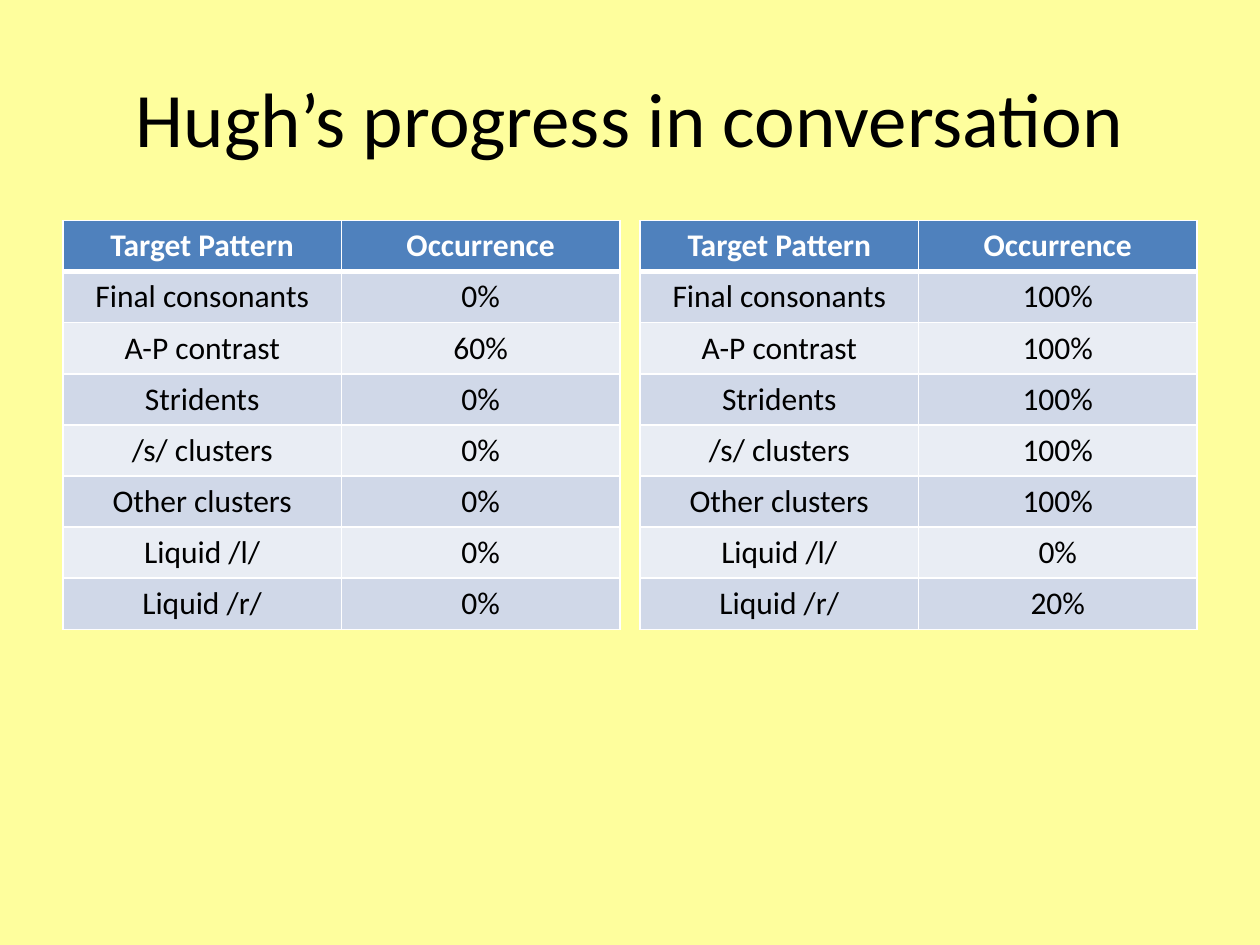
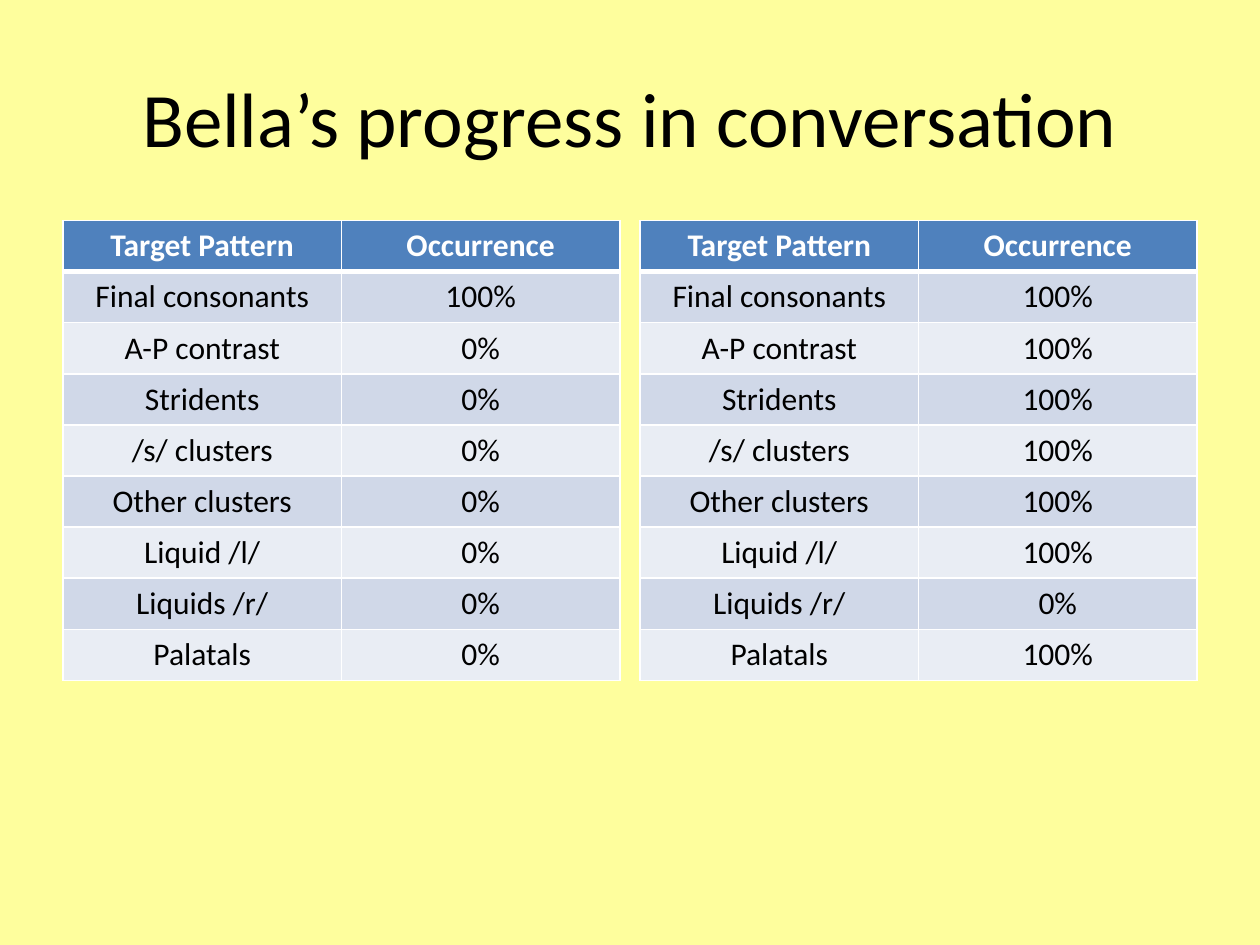
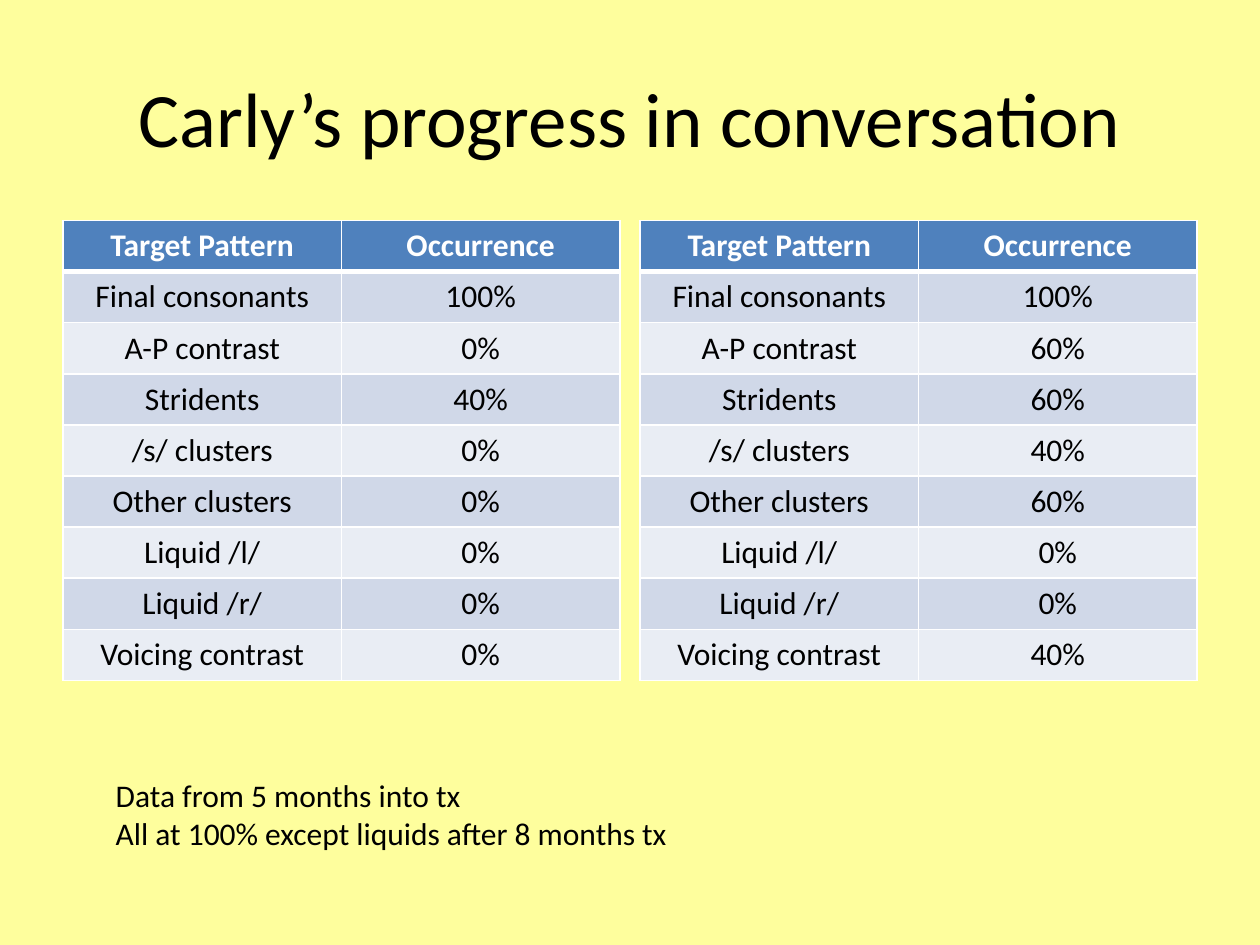
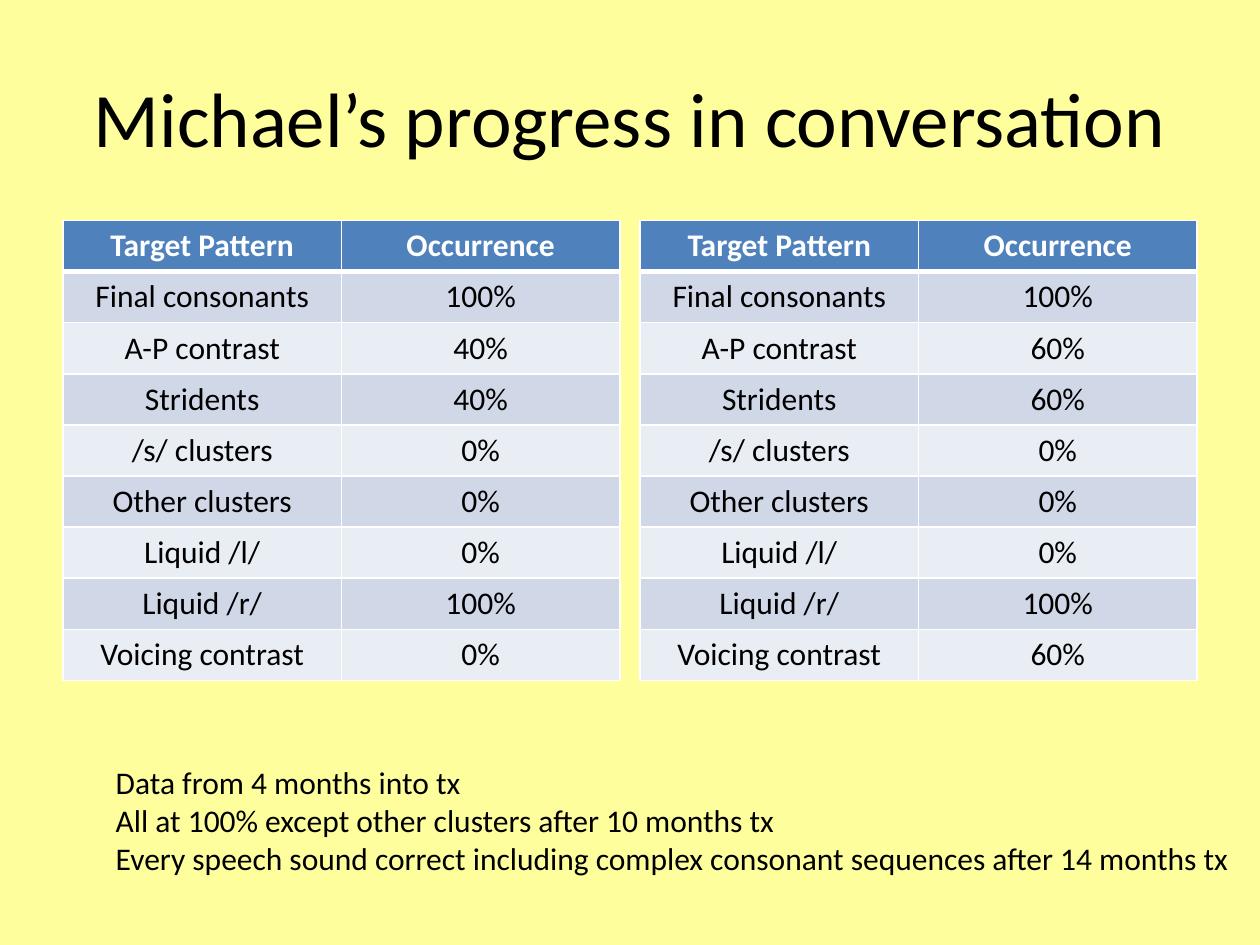
from lxml.etree import SubElement
from pptx import Presentation
from pptx.dml.color import RGBColor
from pptx.enum.text import MSO_ANCHOR, MSO_AUTO_SIZE, PP_ALIGN
from pptx.oxml.ns import qn
from pptx.util import Inches, Pt

# Content: each row is a pattern, its first and its later occurrence
HEADER = ("Target Pattern", "Occurrence")
CHILDREN = [
    {
        "name": "Hugh",
        "rows": [
            ("Final consonants", "0%", "100%"),
            ("A-P contrast", "60%", "100%"),
            ("Stridents", "0%", "100%"),
            ("/s/ clusters", "0%", "100%"),
            ("Other clusters", "0%", "100%"),
            ("Liquid /l/", "0%", "0%"),
            ("Liquid /r/", "0%", "20%"),
        ],
    },
    {
        "name": "Bella",
        "rows": [
            ("Final consonants", "100%", "100%"),
            ("A-P contrast", "0%", "100%"),
            ("Stridents", "0%", "100%"),
            ("/s/ clusters", "0%", "100%"),
            ("Other clusters", "0%", "100%"),
            ("Liquid /l/", "0%", "100%"),
            ("Liquids /r/", "0%", "0%"),
            ("Palatals", "0%", "100%"),
        ],
    },
    {
        "name": "Carly",
        "rows": [
            ("Final consonants", "100%", "100%"),
            ("A-P contrast", "0%", "60%"),
            ("Stridents", "40%", "60%"),
            ("/s/ clusters", "0%", "40%"),
            ("Other clusters", "0%", "60%"),
            ("Liquid /l/", "0%", "0%"),
            ("Liquid /r/", "0%", "0%"),
            ("Voicing contrast", "0%", "40%"),
        ],
        "remarks": [
            "Data from 5 months into tx",
            "All at 100% except liquids after 8 months tx",
        ],
        "remarks_at": (0.82, 6.11, 4.65, 0.71),
    },
    {
        "name": "Michael",
        "rows": [
            ("Final consonants", "100%", "100%"),
            ("A-P contrast", "40%", "60%"),
            ("Stridents", "40%", "60%"),
            ("/s/ clusters", "0%", "0%"),
            ("Other clusters", "0%", "0%"),
            ("Liquid /l/", "0%", "0%"),
            ("Liquid /r/", "100%", "100%"),
            ("Voicing contrast", "0%", "60%"),
        ],
        "remarks": [
            "Data from 4 months into tx",
            "All at 100% except other clusters after 10 months tx",
            "Every speech sound correct including complex consonant sequences after 14 months tx",
        ],
        "remarks_at": (0.82, 6.01, 9.15, 1.01),
    },
]

# Shared look
FONT = "Calibri"
BACKGROUND = RGBColor(0xFE, 0xFE, 0x9D)
BLACK = RGBColor(0x00, 0x00, 0x00)
WHITE = RGBColor(0xFF, 0xFF, 0xFF)
HEADER_BLUE = RGBColor(0x4F, 0x81, 0xBD)
BANDS = (RGBColor(0xE9, 0xED, 0xF4), RGBColor(0xD0, 0xD8, 0xE8))

# Shared layout
TITLE_AT = (0.5, 0.3, 9, 1.25)
TABLE_LEFTS = (0.5, 5.08)
TABLE_TOP = Inches(1.75)
COLUMN_WIDTH = Inches(2.21)
ROW_HEIGHT = Inches(3.65) // 9
THIN, THICK = Pt(1), Pt(3)


def format_text(frame, size, color=BLACK, bold=False, align=PP_ALIGN.LEFT):
    for para in frame.paragraphs:
        para.alignment = align
        for span in para.runs:
            span.font.name = FONT
            span.font.size = Pt(size)
            span.font.bold = bold
            span.font.color.rgb = color


def add_text(page, at, text, size, align=PP_ALIGN.LEFT, wrap=True):
    box = page.shapes.add_textbox(*map(Inches, at))
    frame = box.text_frame
    frame.word_wrap = wrap
    frame.text = text
    format_text(frame, size, align=align)
    return frame


def add_borders(cell, top, bottom):
    properties = cell._tc.get_or_add_tcPr()
    for side, width in (("L", THIN), ("R", THIN), ("T", top), ("B", bottom)):
        line = SubElement(properties, qn(f"a:ln{side}"), w=str(width))
        fill = SubElement(line, qn("a:solidFill"))
        SubElement(fill, qn("a:srgbClr"), val=str(WHITE))


def add_occurrence_table(page, left, rows):
    rows = [HEADER, *rows]
    table = page.shapes.add_table(
        len(rows), len(HEADER), Inches(left), TABLE_TOP,
        COLUMN_WIDTH * len(HEADER), ROW_HEIGHT * len(rows)).table
    for column in table.columns:
        column.width = COLUMN_WIDTH
    for number, values in enumerate(rows):
        is_header = number == 0
        table.rows[number].height = ROW_HEIGHT
        for cell, value in zip(table.rows[number].cells, values):
            # The thick rule lies between the header and the first row
            add_borders(cell, THICK if number == 1 else THIN,
                        THICK if is_header else THIN)
            cell.fill.solid()
            cell.fill.fore_color.rgb = HEADER_BLUE if is_header else BANDS[number % 2]
            cell.text_frame.text = value
            format_text(cell.text_frame, 18, WHITE if is_header else BLACK,
                        is_header, PP_ALIGN.CENTER)


def add_progress_page(deck, child):
    page = deck.slides.add_slide(deck.slide_layouts[6])
    page.background.fill.solid()
    page.background.fill.fore_color.rgb = BACKGROUND

    title = add_text(page, TITLE_AT, f"{child['name']}’s progress in conversation",
                     44, PP_ALIGN.CENTER)
    title.vertical_anchor = MSO_ANCHOR.MIDDLE

    # Earlier results on the left, later ones on the right
    for occurrence, left in enumerate(TABLE_LEFTS, start=1):
        add_occurrence_table(page, left,
                             [(row[0], row[occurrence]) for row in child["rows"]])

    if "remarks" in child:
        remarks = add_text(page, child["remarks_at"], "\n".join(child["remarks"]),
                           18, wrap=False)
        remarks.auto_size = MSO_AUTO_SIZE.SHAPE_TO_FIT_TEXT


def main():
    deck = Presentation()
    deck.slide_width, deck.slide_height = Inches(10), Inches(7.5)
    for child in CHILDREN:
        add_progress_page(deck, child)
    deck.save("out.pptx")


if __name__ == "__main__":
    main()
